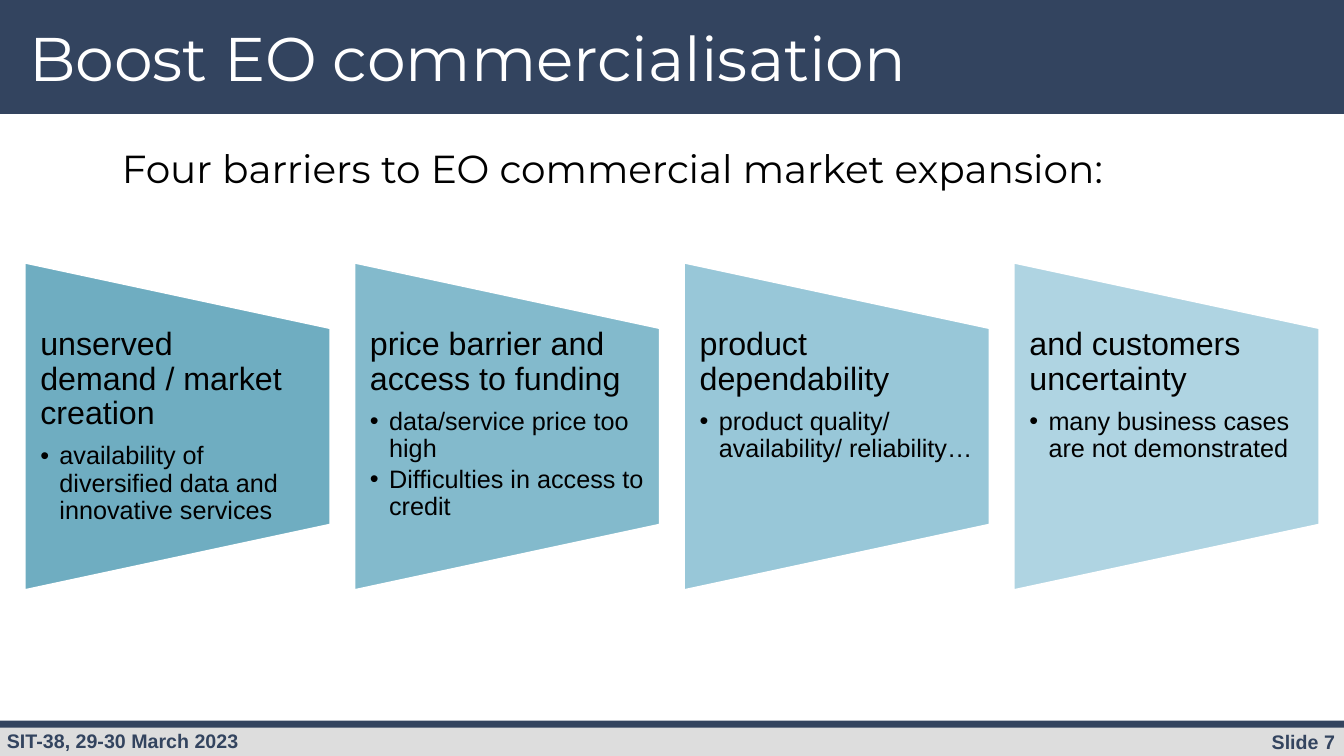
from dataclasses import dataclass

from lxml import etree
from pptx import Presentation
from pptx import util as u
from pptx.dml.color import RGBColor
from pptx.enum import shapes, text
from pptx.oxml.ns import qn

PX = 9144  # 100 px to the inch


@dataclass(frozen=True)
class Theme:
    navy: str = "33445F"
    grey: str = "DDDDDD"
    white: str = "FFFFFF"
    black: str = "000000"
    heading_font: str = "Montserrat"
    body_font: str = "Arial"
    title_size: float = 44
    lead_size: float = 27.9
    barrier_size: float = 23
    detail_size: float = 18
    footer_size: float = 14


THEME = Theme()

BARRIERS = [
    ("6FADC1", "unserved demand / market creation",
     ["availability of diversified data and innovative services"]),
    ("83BACC", "price barrier and access to funding",
     ["data/service price too high", "Difficulties in access to credit"]),
    ("98C7D8", "product dependability",
     ["product quality/ availability/ reliability…"]),
    ("AFD4E2", "and customers uncertainty",
     ["many business cases are not demonstrated"]),
]
BARRIER_STEP = 327


def px(*lengths):
    return [u.Emu(length * PX) for length in lengths]


def add_filled(slide, preset, box, fill):
    shape = slide.shapes.add_shape(preset, *px(*box))
    shape.shadow.inherit = False
    shape.fill.solid()
    shape.fill.fore_color.rgb = RGBColor.from_string(fill)
    shape.line.fill.background()
    return shape


def add_frame(slide, box, side=10, top=5):
    """Add a wrapping text box with the given insets and return its text frame."""
    frame = slide.shapes.add_textbox(*px(*box)).text_frame
    frame.word_wrap = True
    frame.margin_left, frame.margin_right = px(side, side)
    frame.margin_top, frame.margin_bottom = px(top, top)
    return frame


def write(paragraph, words, size, color, font=THEME.body_font, bold=False, spacing=None):
    if spacing:
        paragraph.line_spacing = spacing
    run = paragraph.add_run()
    run.text = words
    run.font.size = u.Pt(size)
    run.font.name = font
    run.font.bold = bold
    run.font.color.rgb = RGBColor.from_string(color)


def indent(paragraph, left, first=0):
    properties = paragraph._p.get_or_add_pPr()
    properties.set("marL", str(left * PX))
    properties.set("indent", str(first * PX))
    return properties


def add_bullet(paragraph):
    properties = indent(paragraph, 19, -19)
    color = etree.SubElement(properties, qn("a:buClr"))
    etree.SubElement(color, qn("a:srgbClr"), val=THEME.black)
    etree.SubElement(properties, qn("a:buFont"), typeface=THEME.body_font)
    etree.SubElement(properties, qn("a:buChar"), char="•")


def add_header(slide):
    add_filled(slide, shapes.MSO_SHAPE.RECTANGLE, (0, 0, 1333, 113), THEME.navy)
    title = add_frame(slide, (19, 19, 1027, 85))
    title.vertical_anchor = text.MSO_ANCHOR.MIDDLE
    write(title.paragraphs[0], "Boost EO commercialisation", THEME.title_size,
          THEME.white, THEME.heading_font, spacing=0.9)


def add_footer(slide):
    add_filled(slide, shapes.MSO_SHAPE.RECTANGLE, (0, 719, 1334, 31), THEME.grey)
    add_filled(slide, shapes.MSO_SHAPE.RECTANGLE, (0, 715, 1334, 7), THEME.navy)
    for box, words, side in [
        ((1123, 719, 211, 34), "Slide 7", text.PP_ALIGN.RIGHT),
        ((-3, 718, 539, 34), "SIT-38, 29-30 March 2023", text.PP_ALIGN.LEFT),
    ]:
        label = add_frame(slide, box).paragraphs[0]
        label.alignment = side
        write(label, words, THEME.footer_size, THEME.navy, bold=True)


def add_lead(slide):
    lead = add_frame(slide, (85, 130, 1114, 62)).paragraphs[0]
    indent(lead, 26)
    write(lead, "Four barriers to EO commercial market expansion:", THEME.lead_size,
          THEME.black, THEME.heading_font, spacing=1.19)


def add_barrier(slide, offset, fill, heading, details):
    panel = add_filled(slide, shapes.MSO_SHAPE.FLOWCHART_MANUAL_OPERATION,
                       (13 + offset, 271, 326, 304), fill)
    panel.rotation = 270
    panel.line.color.rgb = RGBColor.from_string(THEME.white)
    panel.line.width = u.Pt(2)

    frame = add_frame(slide, (24 + offset, 325, 304, 196), side=16, top=0)
    write(frame.paragraphs[0], heading, THEME.barrier_size, THEME.black, spacing=0.9)
    for index, detail in enumerate(details):
        paragraph = frame.add_paragraph()
        paragraph.level = 1
        add_bullet(paragraph)
        paragraph.space_before = u.Pt(2.7 if index else 8.1)
        write(paragraph, detail, THEME.detail_size, THEME.black, spacing=0.9)


def main():
    deck = Presentation()
    deck.slide_width, deck.slide_height = px(1333, 750)
    slide = deck.slides.add_slide(deck.slide_layouts[6])
    add_header(slide)
    add_footer(slide)
    for index, barrier in enumerate(BARRIERS):
        add_barrier(slide, index * BARRIER_STEP, *barrier)
    add_lead(slide)
    deck.save("out.pptx")


if __name__ == "__main__":
    main()
